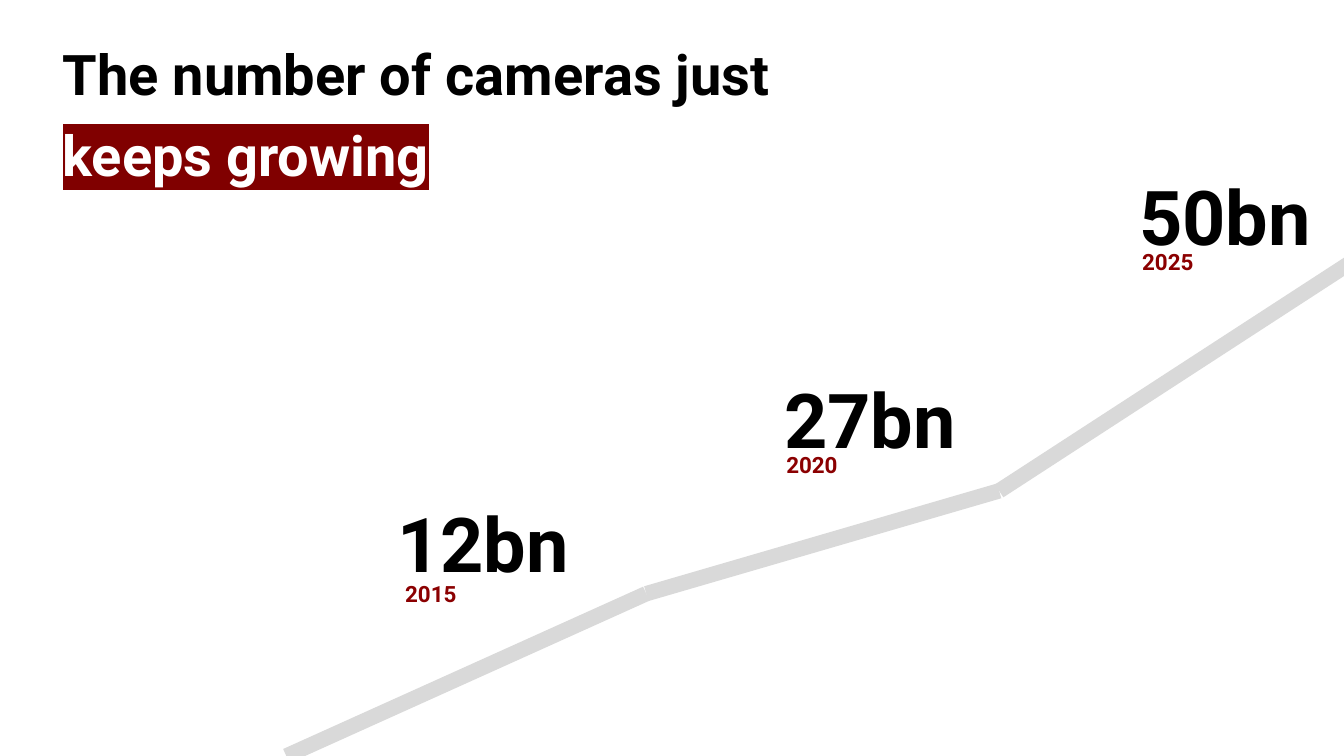
from dataclasses import dataclass
from itertools import pairwise

from lxml import etree
from pptx import Presentation
from pptx.dml.color import RGBColor
from pptx.enum.shapes import MSO_CONNECTOR
from pptx.enum.text import MSO_ANCHOR, MSO_AUTO_SIZE, PP_ALIGN
from pptx.oxml.ns import qn
from pptx.util import Inches, Pt

STRAIGHT = MSO_CONNECTOR.STRAIGHT
TOP = MSO_ANCHOR.TOP
GROW = MSO_AUTO_SIZE.SHAPE_TO_FIT_TEXT
LEFT, CENTER = PP_ALIGN.LEFT, PP_ALIGN.CENTER
TITLE_ONLY = 5


@dataclass(frozen=True)
class Theme:
    font: str = "Roboto"
    text: str = "000000"
    inverse: str = "FFFFFF"
    marker: str = "800000"
    year: str = "8B0001"
    trend: str = "D9D9D9"
    title_size: int = 40
    value_size: int = 54
    year_size: int = 16
    trend_width: int = 11
    line_spacing: float = 1.2


@dataclass(frozen=True)
class Milestone:
    value: str
    value_at: tuple[float, float]
    year: str
    year_at: tuple[float, float]


THEME = Theme()
VALUE_BOX = (1.98, 1.11)
YEAR_BOX = (0.79, 0.4)
TREND_POINTS = [(2.84, 7.5), (6.41, 5.89), (9.91, 4.87), (13.45, 2.57)]
MILESTONES = [
    Milestone("12bn", (3.8, 4.7), "2015", (3.92, 5.65)),
    Milestone("27bn", (7.64, 3.47), "2020", (7.7, 4.37)),
    Milestone("50bn", (11.16, 1.46), "2025", (11.23, 2.36)),
]


def setup_frame(sp, align=LEFT):
    """Prepare the text frame and return its paragraph."""
    tf = sp.text_frame
    tf.word_wrap = True
    tf.auto_size = GROW
    tf.vertical_anchor = TOP
    p = tf.paragraphs[0]
    p.alignment = align
    p.line_spacing = THEME.line_spacing
    return p


def add_text(p, text: str, *, size: int, color: str, highlight: str | None = None) -> None:
    r = p.add_run()
    r.text = text
    r.font.name = THEME.font
    r.font.size = Pt(size)
    r.font.bold = True
    r.font.color.rgb = RGBColor.from_string(color)
    if highlight:
        mark = etree.Element(qn("a:highlight"))
        etree.SubElement(mark, qn("a:srgbClr"), val=highlight)
        r.font._element.find(qn("a:solidFill")).addnext(mark)


def add_label(s, text: str, at: tuple[float, float], box: tuple[float, float],
              *, size: int, color: str, align=LEFT) -> None:
    sp = s.shapes.add_textbox(*map(Inches, at + box))
    add_text(setup_frame(sp, align), text, size=size, color=color)


def add_trend(s, start: tuple[float, float], end: tuple[float, float]) -> None:
    line = s.shapes.add_connector(STRAIGHT, *map(Inches, start + end))
    line.line.color.rgb = RGBColor.from_string(THEME.trend)
    line.line.width = Pt(THEME.trend_width)
    etree.SubElement(line._element.spPr, qn("a:effectLst"))


def add_title(s) -> None:
    title = s.shapes.title
    title.left, title.top, title.width, title.height = map(Inches, (0.52, 0.21, 8.11, 1.65))
    p = setup_frame(title)
    add_text(p, "The number of cameras just ", size=THEME.title_size, color=THEME.text)
    add_text(p, "keeps growing", size=THEME.title_size, color=THEME.inverse,
             highlight=THEME.marker)


def main() -> None:
    prs = Presentation()
    prs.slide_width, prs.slide_height = Inches(13.33), Inches(7.5)
    s = prs.slides.add_slide(prs.slide_layouts[TITLE_ONLY])

    # Title
    add_title(s)

    # Trend line
    for start, end in pairwise(TREND_POINTS):
        add_trend(s, start, end)

    # Milestones
    for m in MILESTONES:
        add_label(s, m.value, m.value_at, VALUE_BOX,
                  size=THEME.value_size, color=THEME.text, align=CENTER)
        add_label(s, m.year, m.year_at, YEAR_BOX,
                  size=THEME.year_size, color=THEME.year)

    prs.save("out.pptx")


if __name__ == "__main__":
    main()
